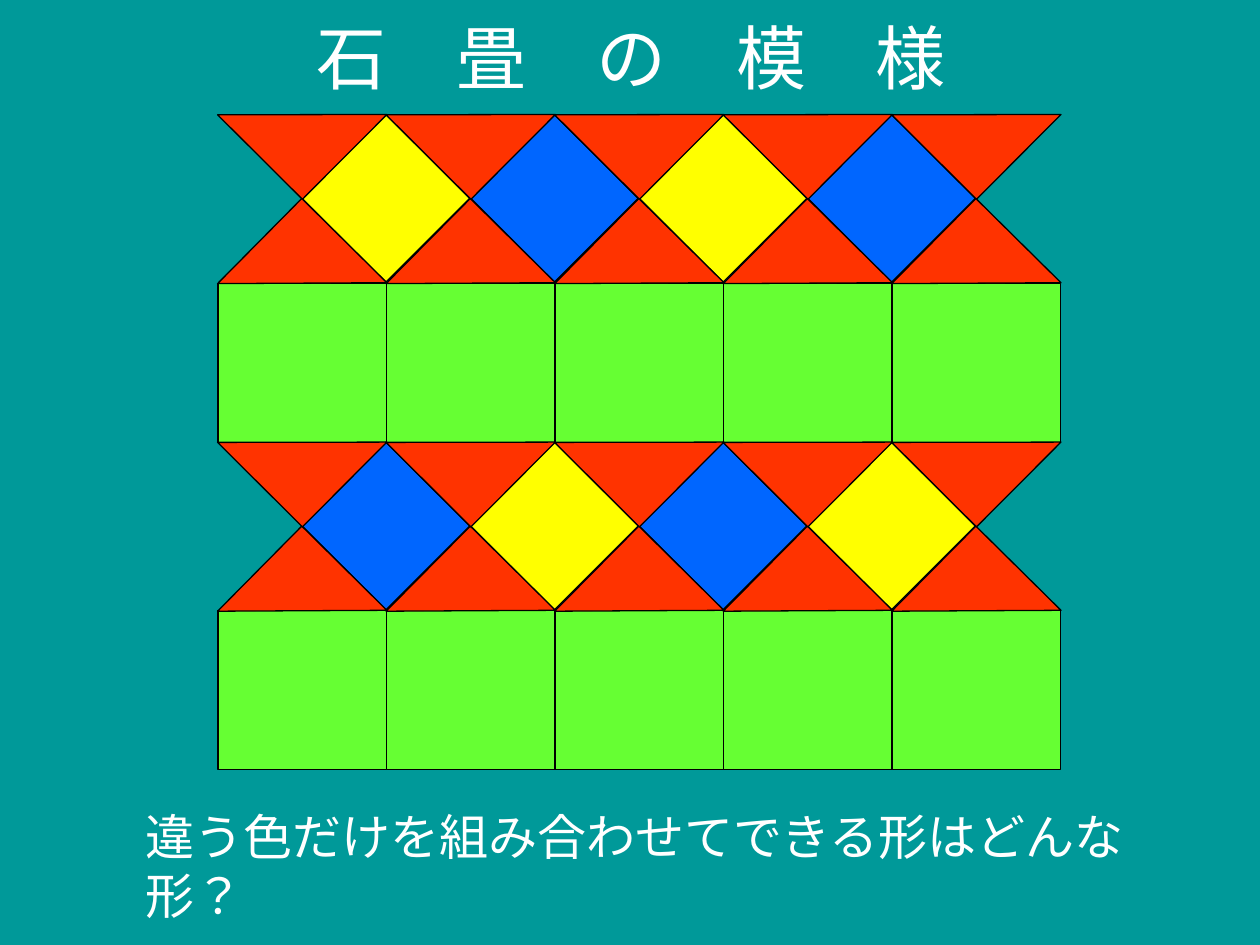
from pptx import Presentation
from pptx.dml.color import RGBColor
from pptx.enum.lang import MSO_LANGUAGE_ID
from pptx.enum.shapes import MSO_SHAPE
from pptx.enum.text import MSO_ANCHOR, PP_ALIGN
from pptx.util import Inches, Pt

DIAMOND, SQUARE, CORNER = MSO_SHAPE.DIAMOND, MSO_SHAPE.RECTANGLE, MSO_SHAPE.RIGHT_TRIANGLE
LEFT, CENTER = PP_ALIGN.LEFT, PP_ALIGN.CENTER
TOP, MIDDLE = MSO_ANCHOR.TOP, MSO_ANCHOR.MIDDLE
JAPANESE = MSO_LANGUAGE_ID.JAPANESE

TEAL = RGBColor(0x00, 0x99, 0x99)
YELLOW = RGBColor(0xFF, 0xFF, 0x00)
BLUE = RGBColor(0x00, 0x66, 0xFF)
GREEN = RGBColor(0x66, 0xFF, 0x33)
RED = RGBColor(0xFF, 0x33, 0x00)
BLACK = RGBColor(0x00, 0x00, 0x00)
WHITE = RGBColor(0xFF, 0xFF, 0xFF)

COLUMNS = 5
PITCH = 1.3375
GEM = 1.33
LEG = 0.95


def add_tile(slide, kind, color, left, top, width, height, turn=0):
    tile = slide.shapes.add_shape(kind, Inches(left), Inches(top), Inches(width), Inches(height))
    tile.shadow.inherit = False
    tile.rotation = turn
    tile.fill.solid()
    tile.fill.fore_color.rgb = color
    tile.line.color.rgb = BLACK
    tile.line.width = Pt(0.75)


def add_band(slide, left, top, height, gems):
    base = top + PITCH
    for i, color in enumerate(gems):
        add_tile(slide, DIAMOND, color, left + (i + 0.5) * PITCH, top, GEM, GEM)
    for i in range(COLUMNS):
        add_tile(slide, SQUARE, GREEN, left + i * PITCH, base, PITCH, height - PITCH)
    for edge, turn in ((base, 134.7), (top, 314.9)):
        for i in range(COLUMNS):
            middle = left + (i + 0.5) * PITCH
            add_tile(slide, CORNER, RED, middle - LEG / 2, edge - LEG / 2, LEG, LEG, turn)


def add_label(slide, text, left, top, width, height, size, align, anchor):
    box = slide.shapes.add_textbox(Inches(left), Inches(top), Inches(width), Inches(height))
    frame = box.text_frame
    frame.word_wrap = True
    frame.vertical_anchor = anchor
    line = frame.paragraphs[0]
    line.alignment = align
    run = line.add_run()
    run.text = text
    run.font.name = "Arial"
    run.font.size = Pt(size)
    run.font.color.rgb = WHITE
    run.font.language_id = JAPANESE


def main():
    deck = Presentation()
    deck.slide_width, deck.slide_height = Inches(10), Inches(7.5)
    slide = deck.slides.add_slide(deck.slide_layouts[6])
    slide.background.fill.solid()
    slide.background.fill.fore_color.rgb = TEAL
    add_band(slide, 1.73, 0.91, 2.6, (YELLOW, BLUE) * 2)
    add_band(slide, 1.73, 3.51, 2.6, (BLUE, YELLOW) * 2)
    add_label(slide, "石　畳　の　模　様", 0.51, 0.21, 9, 0.47, 40, CENTER, MIDDLE)
    add_label(slide, "違う色だけを組み合わせてできる形はどんな形？", 1.06, 6.35, 8.25, 0.57, 28, LEFT, TOP)
    deck.save("out.pptx")


if __name__ == "__main__":
    main()
